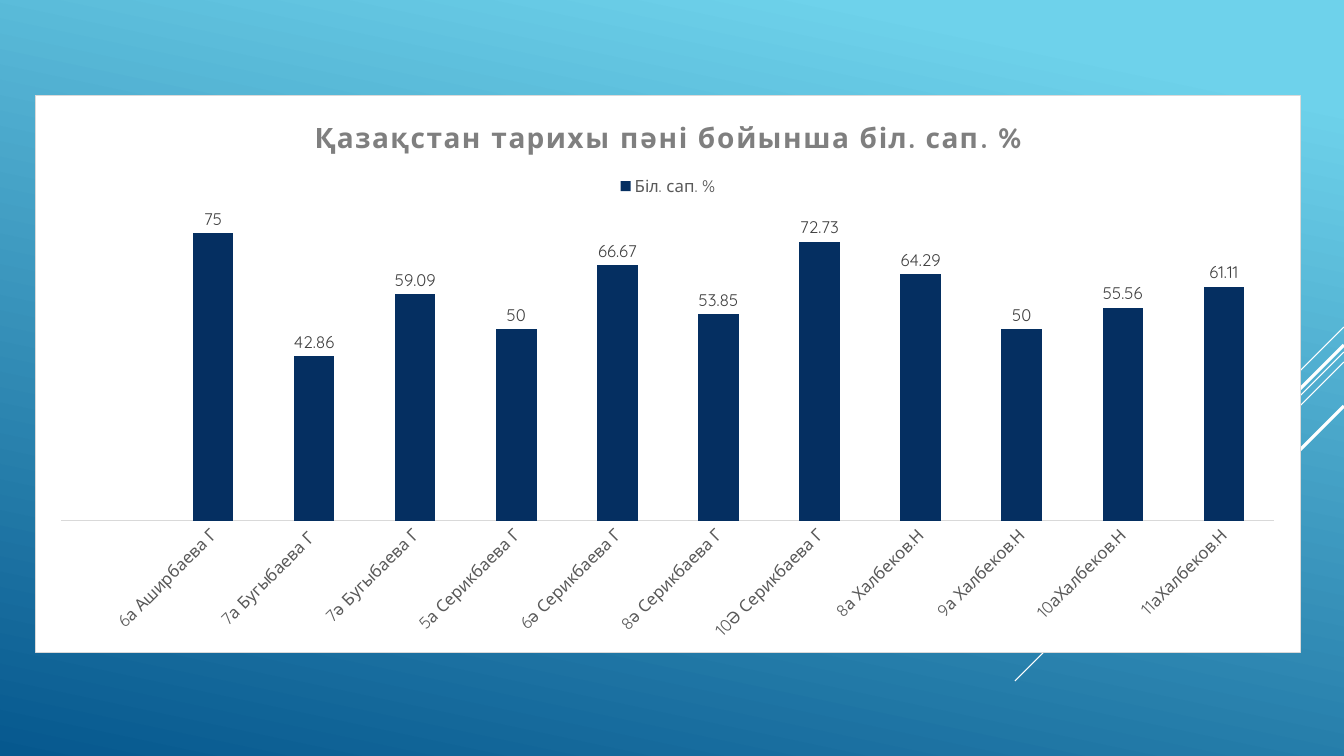
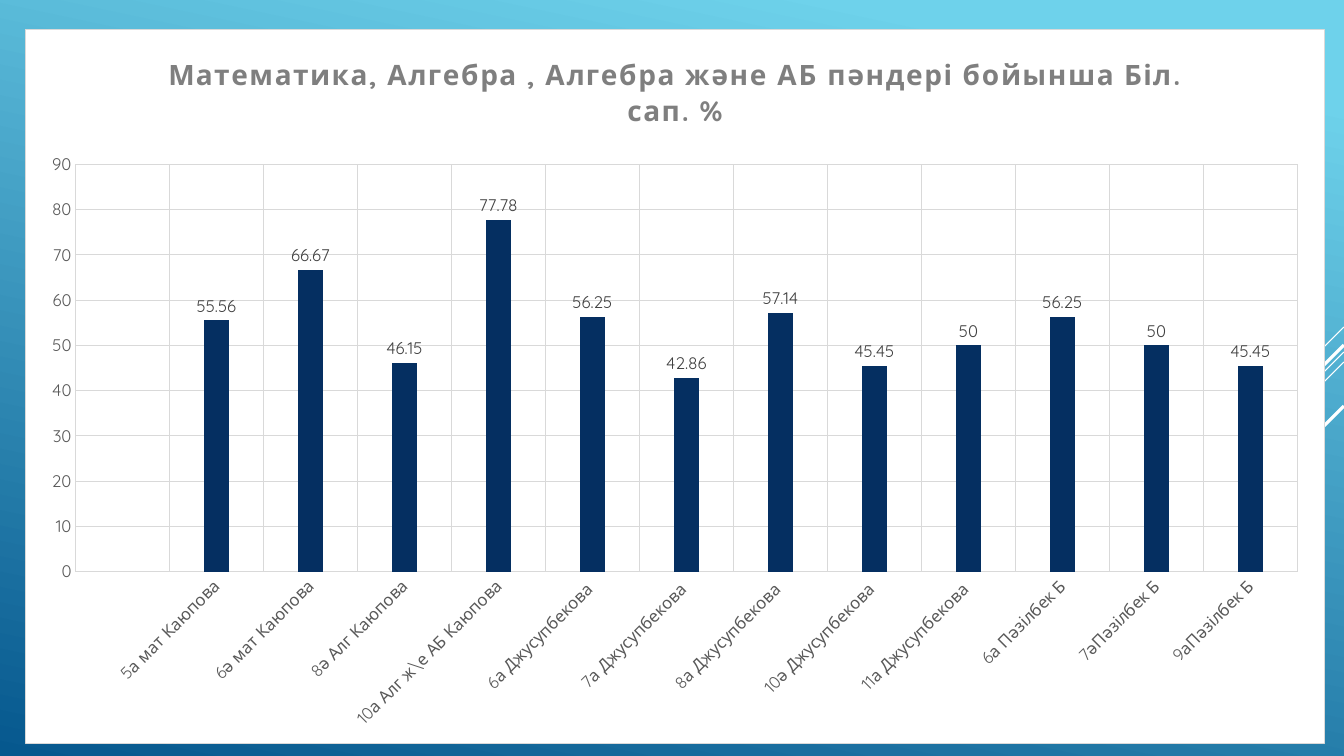
from lxml import etree
from pptx import Presentation, util as u
from pptx.chart.data import CategoryChartData
from pptx.dml.color import RGBColor
from pptx.enum import chart as ec, shapes
from pptx.oxml import parse_xml
from pptx.oxml.ns import nsdecls, qn

SCALE = 914400 / 100.8
WIDE, HIGH = 1344, 756
FACE = "Quicksand"
HUES = {"sky": "6ED2EB", "deep": "06588E", "white": "FFFFFF", "bar": "052F61",
        "rule": "D9D9D9", "head": "7F7F7F", "axis": "595959", "label": "404040"}
FONTS = {
    "head": {"size": u.Pt(20), "bold": True, "name": FACE},
    "axis": {"size": u.Pt(12), "bold": False, "name": FACE},
    "label": {"size": u.Pt(12), "bold": False, "name": FACE},
}
RAYS = [(327, 101, 0.75), (352, 329, 0.75), (362, 209, 0.75),
        (345, 193, 2.25), (406, 140, 2.25)]

CHARTS = [
    {
        "title": "Қазақстан тарихы пәні бойынша біл. сап. %",
        "series": "Біл. сап. %",
        "box": (35, 95, 1266, 558), "plot": (61, 214, 1214, 307),
        "top": 80, "gap": 150, "overlap": -25, "grid": False, "legend": True,
        "rows": [("", None), ("6а Аширбаева Г", 75), ("7а Бугыбаева Г ", 42.86),
                 ("7ә Бугыбаева Г", 59.09), ("5а Серикбаева Г", 50),
                 ("6ә Серикбаева Г", 66.67), ("8ә Серикбаева Г", 53.85),
                 ("10Ә Серикбаева Г", 72.73), ("8а Халбеков.Н", 64.29),
                 ("9а Халбеков.Н", 50), ("10аХалбеков.Н", 55.56),
                 ("11аХалбеков.Н", 61.11)],
    },
    {
        "title": "Математика, Алгебра , Алгебра және АБ пәндері бойынша Біл. сап. %",
        "series": "Series 1",
        "box": (25, 29, 1300, 715), "plot": (75, 164, 1223, 408),
        "top": 90, "gap": 267, "overlap": -43, "grid": True, "legend": False,
        "rows": [("", None), ("5а мат Каюпова", 55.56), ("6ә мат Каюпова", 66.67),
                 ("8ә Алг Каюпова", 46.15), ("10а Алг ж\\е АБ Каюпова", 77.78),
                 ("6а Джусупбекова ", 56.25), ("7а Джусупбекова ", 42.86),
                 ("8а Джусупбекова ", 57.14), ("10ә Джусупбекова ", 45.45),
                 ("11а Джусупбекова ", 50), ("6а Пәзілбек Б", 56.25),
                 ("7әПәзілбек Б", 50), ("9аПәзілбек Б", 45.45)],
    },
]


def px(n):
    return u.Emu(round(n * SCALE))


def hue(key):
    return RGBColor.from_string(HUES[key])


def style(font, key):
    for name, val in FONTS[key].items():
        setattr(font, name, val)
    font.color.rgb = hue(key)


def stroke(line, key, width=0.75):
    line.color.rgb = hue(key)
    line.width = u.Pt(width)


def backdrop(master):
    fill = master.background.fill
    fill.gradient()
    fill.gradient_angle = 258
    for stop, (key, spot) in zip(fill.gradient_stops, [("sky", 0.1), ("deep", 1)]):
        stop.color.rgb = hue(key)
        stop.position = spot


def rays(slide):
    for y, run, width in RAYS:
        ray = slide.shapes.add_connector(
            shapes.MSO_CONNECTOR.STRAIGHT, px(WIDE), px(y), px(WIDE - run), px(y + run))
        stroke(ray.line, "white", width)
        etree.SubElement(ray._element.spPr, qn("a:effectLst"))


def panel(chart):
    frame = parse_xml(
        f'<c:spPr {nsdecls("c", "a")}><a:solidFill><a:srgbClr val="{HUES["white"]}"/>'
        f'</a:solidFill><a:ln w="9525"><a:solidFill><a:srgbClr val="{HUES["rule"]}"/>'
        '</a:solidFill></a:ln></c:spPr>')
    chart._chartSpace.find(qn("c:chart")).addnext(frame)


def place(chart, box, plot):
    area = chart._chartSpace.find(qn("c:chart")).find(qn("c:plotArea"))
    for old in area.findall(qn("c:layout")):
        area.remove(old)
    left, top, wide, high = box
    parts = [("layoutTarget", "inner"), ("xMode", "edge"), ("yMode", "edge"),
             ("x", (plot[0] - left) / wide), ("y", (plot[1] - top) / high),
             ("w", plot[2] / wide), ("h", plot[3] / high)]
    layout = etree.Element(qn("c:layout"))
    manual = etree.SubElement(layout, qn("c:manualLayout"))
    for tag, val in parts:
        etree.SubElement(manual, qn("c:" + tag)).set("val", str(val))
    area.insert(0, layout)


def axes(chart, info):
    cat, val = chart.category_axis, chart.value_axis
    for axis in (cat, val):
        axis.major_tick_mark = axis.minor_tick_mark = ec.XL_TICK_MARK.NONE
        axis.has_major_gridlines = info["grid"]
        if info["grid"]:
            stroke(axis.major_gridlines.format.line, "rule")
        style(axis.tick_labels.font, "axis")
    stroke(cat.format.line, "rule")
    cat._element.find(qn("c:txPr")).find(qn("a:bodyPr")).set("rot", "-2700000")
    val.format.line.fill.background()
    val.minimum_scale, val.maximum_scale, val.major_unit = 0, info["top"], 10
    val.visible = info["grid"]


def bars(chart, info):
    plot = chart.plots[0]
    for name, val in {"gap_width": info["gap"], "overlap": info["overlap"],
                      "vary_by_categories": False}.items():
        setattr(plot, name, val)
    row = plot.series[0]
    row.format.fill.solid()
    row.format.fill.fore_color.rgb = hue("bar")
    tags = row.data_labels
    tags.show_value = True
    tags.position = ec.XL_LABEL_POSITION.OUTSIDE_END
    style(tags.font, "label")


def draw(slide, info):
    data = CategoryChartData()
    names, vals = zip(*info["rows"])
    data.categories = names
    data.add_series(info["series"], vals)
    chart = slide.shapes.add_chart(
        ec.XL_CHART_TYPE.COLUMN_CLUSTERED, *map(px, info["box"]), data).chart
    chart.font.name, chart.font.size = FACE, u.Pt(10)
    panel(chart)
    chart.has_title = True
    head = chart.chart_title
    head.include_in_layout = False
    run = head.text_frame.paragraphs[0].add_run()
    run.text = info["title"]
    style(run.font, "head")
    run.font._element.set("spc", "100")
    chart.has_legend = info["legend"]
    if info["legend"]:
        chart.legend.position = ec.XL_LEGEND_POSITION.TOP
        chart.legend.include_in_layout = False
        style(chart.legend.font, "axis")
    axes(chart, info)
    bars(chart, info)
    place(chart, info["box"], info["plot"])


def main():
    deck = Presentation()
    deck.slide_width, deck.slide_height = px(WIDE), px(HIGH)
    backdrop(deck.slide_master)
    for info in CHARTS:
        slide = deck.slides.add_slide(deck.slide_layouts[6])
        rays(slide)
        draw(slide, info)
    deck.save("out.pptx")


if __name__ == "__main__":
    main()
